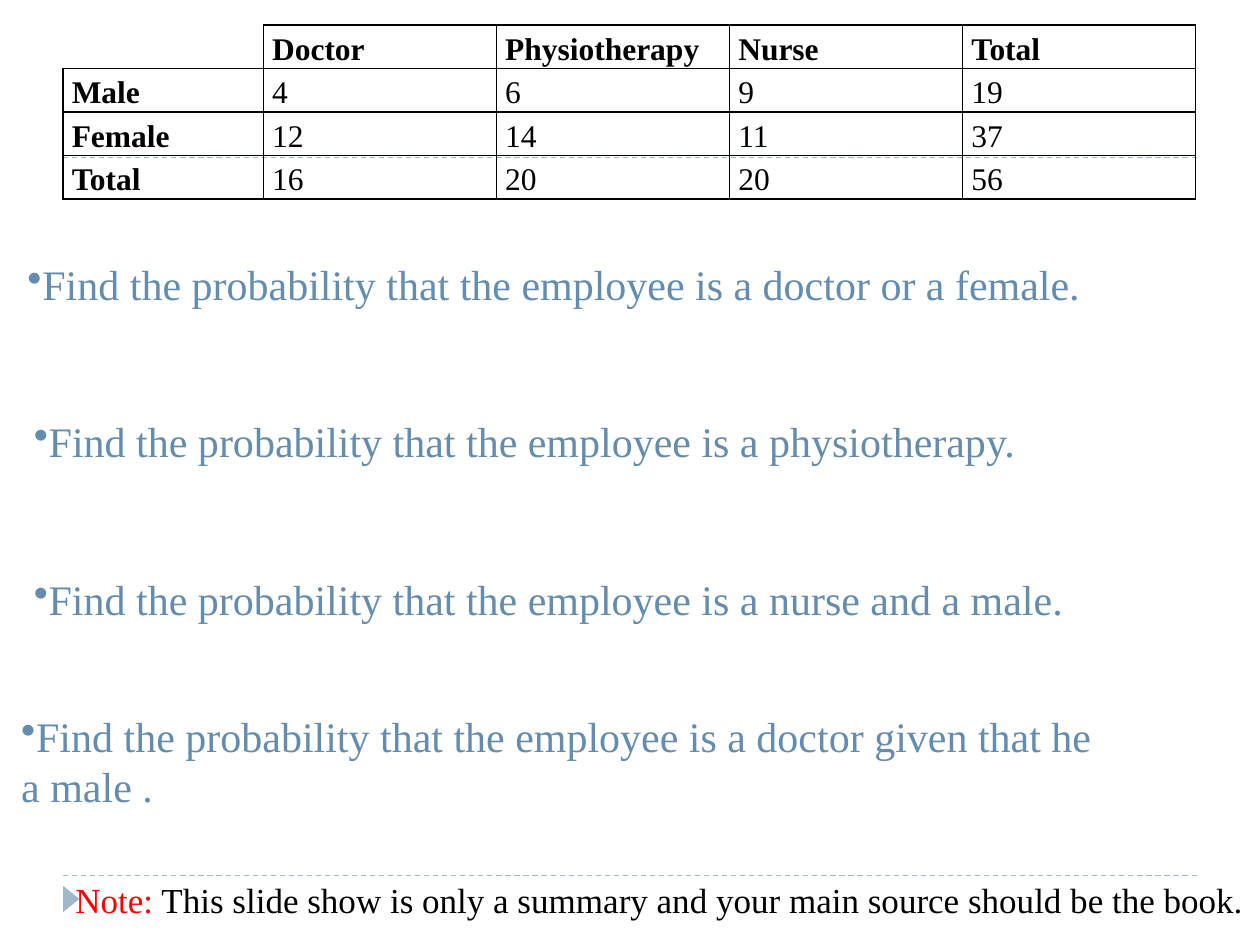
from dataclasses import dataclass

import lxml.etree
import pptx
import pptx.dml.color
import pptx.enum.dml
import pptx.enum.shapes
import pptx.enum.text
import pptx.oxml.ns
import pptx.util

Inches = pptx.util.Inches
Pt = pptx.util.Pt
qn = pptx.oxml.ns.qn

FONT = "Times New Roman"
BLACK = "000000"
ACCENT = "9FB8CD"
QUESTION_COLOR = "638CAE"

STAFF_ROWS = [
    ["", "Doctor", "Physiotherapy", "Nurse", "Total"],
    ["Male", "4", "6", "9", "19"],
    ["Female", "12", "14", "11", "37"],
    ["Total", "16", "20", "20", "56"],
]
COLUMN_WIDTHS = [1.59, 1.85, 1.85, 1.85, 1.85]
ROW_HEIGHT = 0.345


@dataclass
class Question:
    left: float
    top: float
    width: float
    height: float
    lines: list[str]


QUESTIONS = [
    Question(0.12, 2, 8.63, 0.5, ["Find the probability that the employee is a doctor or a female."]),
    Question(0.17, 3.25, 7.99, 0.5, ["Find the probability that the employee is a physiotherapy."]),
    Question(0.17, 4.5, 8.7, 0.5, ["Find the probability that the employee is a nurse and a male."]),
    Question(0.07, 5.58, 8.85, 0.91, ["Find the probability that the employee is a doctor given that he", "a male ."]),
]


def color(value: str) -> pptx.dml.color.RGBColor:
    return pptx.dml.color.RGBColor.from_string(value)


def style_font(font, size: float, value: str, bold: bool = False) -> None:
    font.name = FONT
    font.size = Pt(size)
    font.bold = bold
    font.color.rgb = color(value)


def add_divider(slide, top: float) -> None:
    connector = slide.shapes.add_connector(
        pptx.enum.shapes.MSO_CONNECTOR.STRAIGHT, Inches(0.5), Inches(top), Inches(9.5), Inches(top)
    )
    connector.line.color.rgb = color(ACCENT)
    connector.line.width = Pt(0.75)
    connector.line.dash_style = pptx.enum.dml.MSO_LINE.DASH
    lxml.etree.SubElement(connector._element.spPr, qn("a:effectLst"))


def add_marker(slide) -> None:
    shape = slide.shapes.add_shape(
        pptx.enum.shapes.MSO_SHAPE.ISOSCELES_TRIANGLE, Inches(0.46), Inches(7.07), Inches(0.21), Inches(0.13)
    )
    shape.rotation = 90
    shape.shadow.inherit = False
    shape.fill.solid()
    shape.fill.fore_color.rgb = color(ACCENT)
    shape.line.fill.background()


def set_borders(cell, hidden_sides: str = "") -> None:
    properties = cell._tc.get_or_add_tcPr()
    for side in "LRTB":
        border = lxml.etree.SubElement(properties, qn(f"a:ln{side}"), w=str(Pt(1)))
        if side in hidden_sides:
            lxml.etree.SubElement(border, qn("a:noFill"))
        else:
            fill = lxml.etree.SubElement(border, qn("a:solidFill"))
            lxml.etree.SubElement(fill, qn("a:srgbClr"), val=BLACK)


def add_staff_table(slide) -> None:
    table = slide.shapes.add_table(
        len(STAFF_ROWS), len(COLUMN_WIDTHS), Inches(0.5), Inches(0.2),
        Inches(sum(COLUMN_WIDTHS)), Inches(ROW_HEIGHT * len(STAFF_ROWS)),
    ).table
    table.first_row = False
    table.horz_banding = False
    for column, width in zip(table.columns, COLUMN_WIDTHS):
        column.width = Inches(width)
    for row_index, values in enumerate(STAFF_ROWS):
        table.rows[row_index].height = Inches(ROW_HEIGHT)
        for column_index, value in enumerate(values):
            cell = table.cell(row_index, column_index)
            is_corner = row_index == column_index == 0
            set_borders(cell, "LT" if is_corner else "")
            cell.fill.background()
            cell.vertical_anchor = pptx.enum.text.MSO_ANCHOR.MIDDLE
            cell.margin_left = cell.margin_right = Inches(0.07)
            cell.margin_top = cell.margin_bottom = 0
            cell.text = value
            paragraph = cell.text_frame.paragraphs[0]
            paragraph.line_spacing = 1.15
            paragraph.space_after = Pt(10)
            style_font(paragraph.font, 18, BLACK, row_index == 0 or column_index == 0)


def add_question(slide, question: Question) -> None:
    frame = slide.shapes.add_textbox(
        Inches(question.left), Inches(question.top), Inches(question.width), Inches(question.height)
    ).text_frame
    frame.word_wrap = False
    frame.auto_size = pptx.enum.text.MSO_AUTO_SIZE.SHAPE_TO_FIT_TEXT
    frame.vertical_anchor = pptx.enum.text.MSO_ANCHOR.MIDDLE
    frame.text = "\n".join(question.lines)
    for paragraph in frame.paragraphs:
        style_font(paragraph.font, 24, QUESTION_COLOR)
    properties = frame.paragraphs[0]._p.get_or_add_pPr()
    bullet = properties.makeelement(qn("a:buChar"), {"char": "•"})
    properties.insert(0, bullet)


def add_note(slide) -> None:
    frame = slide.shapes.add_textbox(Inches(0.5), Inches(6.92), Inches(9.75), Inches(0.44)).text_frame
    frame.word_wrap = True
    frame.auto_size = pptx.enum.text.MSO_AUTO_SIZE.SHAPE_TO_FIT_TEXT
    paragraph = frame.paragraphs[0]
    for text, value in [
        ("Note:", "FF0000"),
        (" This slide show is only a summary and your main source should be the book.", BLACK),
    ]:
        run = paragraph.add_run()
        run.text = text
        style_font(run.font, 20, value)


def main() -> None:
    presentation = pptx.Presentation()
    presentation.slide_width = Inches(10)
    presentation.slide_height = Inches(7.5)
    slide = presentation.slides.add_slide(presentation.slide_layouts[6])
    for top in (6.95, 1.25):
        add_divider(slide, top)
    add_marker(slide)
    add_note(slide)
    add_staff_table(slide)
    for question in QUESTIONS:
        add_question(slide, question)
    presentation.save("out.pptx")


if __name__ == "__main__":
    main()
